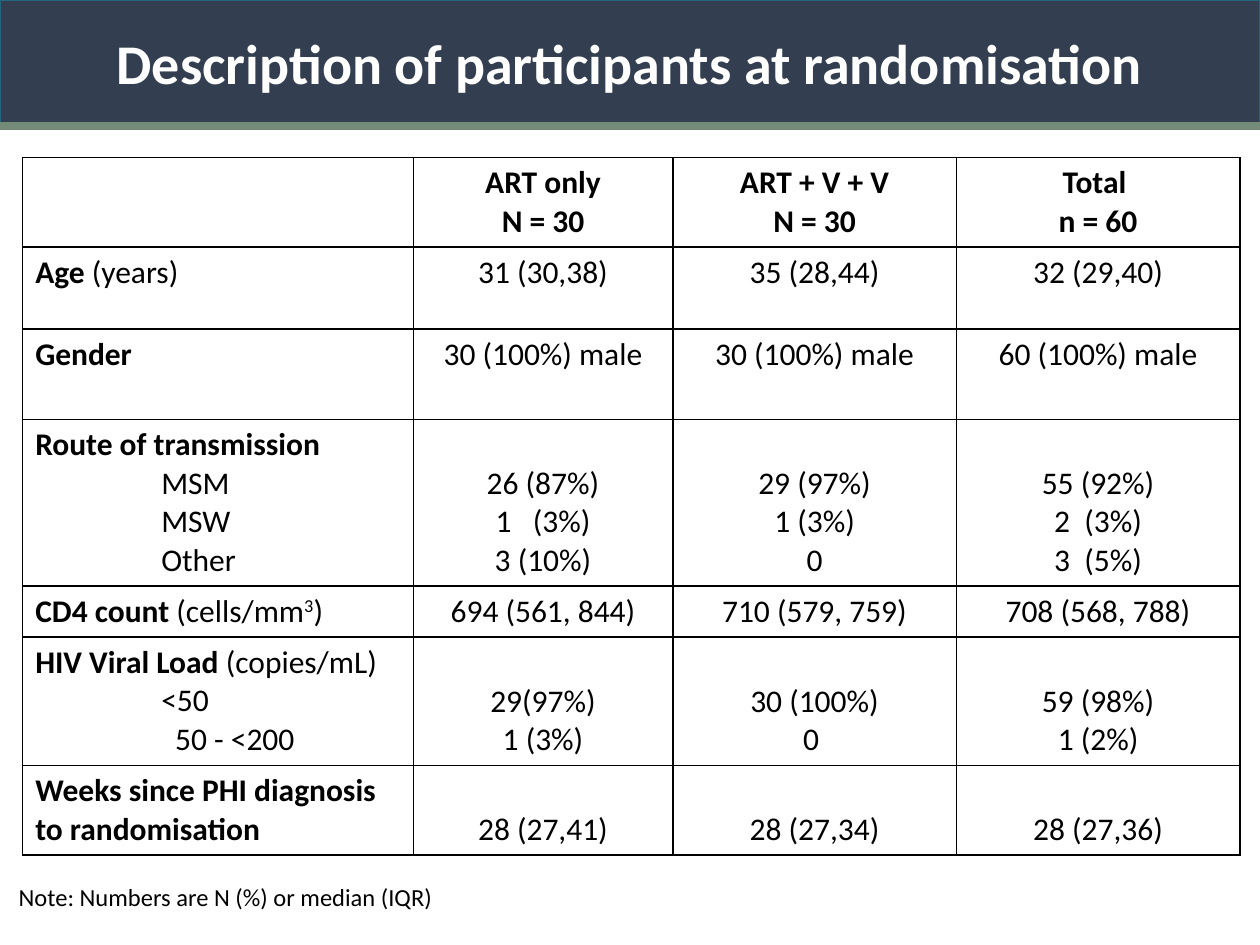
from dataclasses import dataclass

from lxml import etree
from pptx import Presentation
from pptx import util as u
from pptx.dml.color import RGBColor
from pptx.enum import shapes, text
from pptx.oxml.ns import qn

COLOURS = {"ink": "000000", "paper": "FFFFFF", "banner": "333F50",
           "outline": "21677E", "rule": "758B79"}
FONT = "Calibri"
CENTRE = text.PP_ALIGN.CENTER
TOP, BOTTOM = text.MSO_ANCHOR.TOP, text.MSO_ANCHOR.BOTTOM


@dataclass(frozen=True)
class Span:
    text: str
    bold: bool = False
    raised: bool = False


@dataclass(frozen=True)
class Line:
    spans: tuple[Span, ...]
    indent: float = 0


@dataclass(frozen=True)
class Row:
    height: float
    label: tuple[Line, ...]
    values: tuple[str, ...]
    anchor: text.MSO_ANCHOR = TOP
    bold_values: bool = False


def heading(bold: str, plain: str = "") -> Line:
    spans = (Span(bold, bold=True), Span(plain))
    return Line(tuple(span for span in spans if span.text))


def item(words: str, indent: float = 1) -> Line:
    return Line((Span(words),), indent)


COLUMN_WIDTHS = (3.1, 2.06, 2.25, 2.25)
ROWS = (
    Row(0.71, (), ("ART only\nN = 30", "ART + V + V\nN = 30", "Total \nn = 60"),
        bold_values=True),
    Row(0.65, (heading("Age ", "(years)"),), ("31 (30,38)", "35 (28,44)", "32 (29,40)")),
    Row(0.72, (heading("Gender"),), ("30 (100%) male", "30 (100%) male", "60 (100%) male")),
    Row(1.32, (heading("Route of transmission"), item("MSM"), item("MSW"), item("Other")),
        ("26 (87%)\n1   (3%)\n3 (10%)", "29 (97%)\n1 (3%)\n0", "55 (92%)\n2  (3%)\n3  (5%)"),
        BOTTOM),
    Row(0.4, (Line((Span("CD4 count", bold=True), Span(" (cells/mm"),
                    Span("3", raised=True), Span(")"))),),
        ("694 (561, 844)", "710 (579, 759)", "708 (568, 788)")),
    Row(1.02, (heading("HIV Viral Load", " (copies/mL)"), item("<50"), item("50 - <200", 1.11)),
        ("29(97%)\n1 (3%)", "30 (100%)\n0 ", "59 (98%)\n1 (2%)"), BOTTOM),
    Row(0.71, (heading("Weeks since PHI diagnosis to randomisation"),),
        ("28 (27,41)", "28 (27,34)", "28 (27,36)"), BOTTOM),
)


def colour(name: str) -> RGBColor:
    return RGBColor.from_string(COLOURS[name])


def write(frame, lines: tuple[Line, ...], size: float, ink: str = "ink", align=None) -> None:
    for index, line in enumerate(lines):
        para = frame.paragraphs[0] if index == 0 else frame.add_paragraph()
        para.alignment = align
        if line.indent:
            properties = para._p.get_or_add_pPr()
            properties.set("marL", str(u.Inches(line.indent)))
            properties.set("indent", "0")
        for span in line.spans:
            run = para.add_run()
            run.text = span.text
            formats = {"name": FONT, "size": u.Pt(size), "bold": span.bold}
            for name, value in formats.items():
                setattr(run.font, name, value)
            run.font.color.rgb = colour(ink)
            if span.raised:
                run._r.get_or_add_rPr().set("baseline", "30000")


def style_cell(cell) -> None:
    """Give the cell a white fill and a 1 pt border on all sides."""
    properties = cell._tc.get_or_add_tcPr()
    for side in ("lnL", "lnR", "lnT", "lnB"):
        border = etree.SubElement(properties, qn(f"a:{side}"), w=str(u.Pt(1)))
        fill = etree.SubElement(border, qn("a:solidFill"))
        etree.SubElement(fill, qn("a:srgbClr"), val=COLOURS["ink"])
    cell.fill.solid()
    cell.fill.fore_color.rgb = colour("paper")


def add_participant_table(page) -> None:
    table = page.shapes.add_table(
        len(ROWS), len(COLUMN_WIDTHS), u.Inches(0.18), u.Inches(1.25),
        u.Inches(sum(COLUMN_WIDTHS)), u.Inches(sum(row.height for row in ROWS))).table
    table.first_row = table.horz_banding = False
    for column, width in zip(table.columns, COLUMN_WIDTHS):
        column.width = u.Inches(width)
    for index, row in enumerate(ROWS):
        table.rows[index].height = u.Inches(row.height)
        label, *value_cells = table.rows[index].cells
        style_cell(label)
        write(label.text_frame, row.label, 18)
        for cell, value in zip(value_cells, row.values):
            style_cell(cell)
            cell.vertical_anchor = row.anchor
            lines = tuple(Line((Span(words, row.bold_values),)) for words in value.split("\n"))
            write(cell.text_frame, lines, 18, align=CENTRE)


def add_note(page) -> None:
    box = page.shapes.add_textbox(u.Inches(0.05), u.Inches(6.95), u.Inches(8.44), u.Inches(0.34))
    box.text_frame.word_wrap = True
    write(box.text_frame, (item("Note: Numbers are N (%) or median (IQR)", 0),), 14)


def add_banner(page) -> None:
    banner = page.shapes.add_shape(shapes.MSO_SHAPE.RECTANGLE, 0, 0, u.Inches(10), u.Inches(0.99))
    banner.shadow.inherit = False
    banner.fill.solid()
    banner.fill.fore_color.rgb = colour("banner")
    banner.line.color.rgb = colour("outline")
    banner.line.width = u.Pt(0.75)
    banner.text_frame.word_wrap = True
    banner.text_frame.vertical_anchor = text.MSO_ANCHOR.MIDDLE
    write(banner.text_frame, (heading("Description of participants at randomisation"),),
          32, "paper", CENTRE)

    rule = page.shapes.add_connector(
        shapes.MSO_CONNECTOR.STRAIGHT, 0, u.Inches(1), u.Inches(10), u.Inches(1))
    rule.line.color.rgb = colour("rule")
    rule.line.width = u.Pt(4.5)
    etree.SubElement(rule._element.spPr, qn("a:effectLst"))


def main() -> None:
    deck = Presentation()
    deck.slide_width, deck.slide_height = u.Inches(10), u.Inches(7.5)
    page = deck.slides.add_slide(deck.slide_layouts[6])
    add_participant_table(page)
    add_note(page)
    add_banner(page)
    deck.save("out.pptx")


if __name__ == "__main__":
    main()
